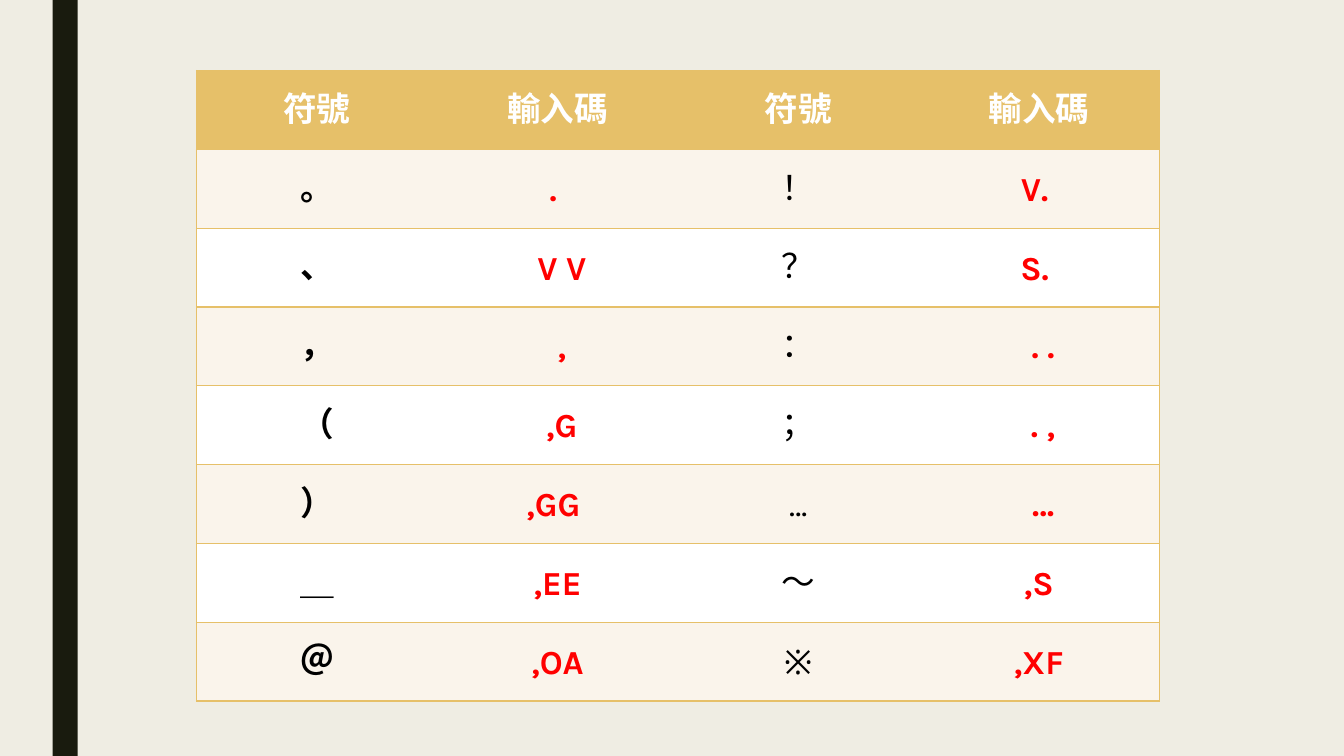
from lxml.etree import SubElement
from pptx import Presentation
from pptx.dml.color import RGBColor
from pptx.enum.shapes import MSO_SHAPE
from pptx.enum.text import MSO_ANCHOR, PP_ALIGN
from pptx.oxml.ns import qn
from pptx.util import Pt

GOLD, CREAM, WHITE = "E6C069", "FAF4EB", "FFFFFF"
BLACK, RED = "000000", "FF0000"

ROWS = [
    ("符號", "輸入碼", "符號", "輸入碼"),
    ("。", ". ", "！", "V. "),
    ("、", " V V", "？", "S. "),
    ("，", " ,", "：", " . ."),
    ("（", " ,G", "；", " . ,"),
    ("）", ",GG ", "…", " …"),
    ("＿", ",EE", "～", ",S"),
    ("＠", ",OA", "※", ",XF"),
]


def tint(fill, code):
    fill.solid()
    fill.fore_color.rgb = RGBColor.from_string(code)


def apply(item, style):
    for name, value in style.items():
        setattr(item, name, value)


def border(cell, sides):
    """Draw gold lines on the given sides and clear the others."""
    props = cell._tc.get_or_add_tcPr()
    for spot, side in enumerate("LRTB"):
        line = SubElement(props, qn(f"a:ln{side}"), w=str(Pt(1)))
        if side in sides:
            paint = SubElement(line, qn("a:solidFill"))
            SubElement(paint, qn("a:srgbClr"), val=GOLD)
        else:
            SubElement(line, qn("a:noFill"))
        props.insert(spot, line)  # lines must precede the fill


def write(cell, text, color, bold):
    apply(cell, {"vertical_anchor": MSO_ANCHOR.MIDDLE,
                 "margin_left": Pt(5), "margin_right": Pt(5),
                 "margin_top": 0, "margin_bottom": 0})
    para = cell.text_frame.paragraphs[0]
    apply(para, {"alignment": PP_ALIGN.CENTER, "line_spacing": Pt(30)})
    run = para.add_run()
    run.text = text
    apply(run.font, {"name": "Karla", "size": Pt(24), "bold": bold})
    tint(run.font.fill, color)


def side_bar(slide, left, top, width, height):
    bar = slide.shapes.add_shape(MSO_SHAPE.RECTANGLE, Pt(left), Pt(top),
                                 Pt(width), Pt(height))
    bar.shadow.inherit = False
    tint(bar.fill, "191B0E")
    bar.line.fill.background()


def code_table(slide, left, top, width, height):
    count, last = len(ROWS), len(ROWS[0]) - 1
    table = slide.shapes.add_table(count, last + 1, Pt(left), Pt(top),
                                   Pt(width), Pt(height)).table
    for col in table.columns:
        col.width = Pt(width / (last + 1))
    for r, texts in enumerate(ROWS):
        table.rows[r].height = Pt(height / count)
        back = GOLD if r == 0 else CREAM if r % 2 else WHITE
        for c, text in enumerate(texts):
            cell = table.cell(r, c)
            color = WHITE if r == 0 else RED if c % 2 else BLACK
            # Symbols in the third column are the only regular weight
            write(cell, text, color, r == 0 or c != 2)
            tint(cell.fill, back)
            border(cell, "TB" + {0: "L", last: "R"}.get(c, ""))


def main():
    deck = Presentation()
    apply(deck, {"slide_width": Pt(960), "slide_height": Pt(540)})
    slide = deck.slides.add_slide(deck.slide_layouts[6])
    tint(slide.background.fill, "EFEDE3")

    # Dark stripe, then the table of symbols and codes
    side_bar(slide, 37.5, 0, 18, 540)
    code_table(slide, 140.4, 50.4, 687.6, 450.4)
    deck.save("out.pptx")


if __name__ == "__main__":
    main()
